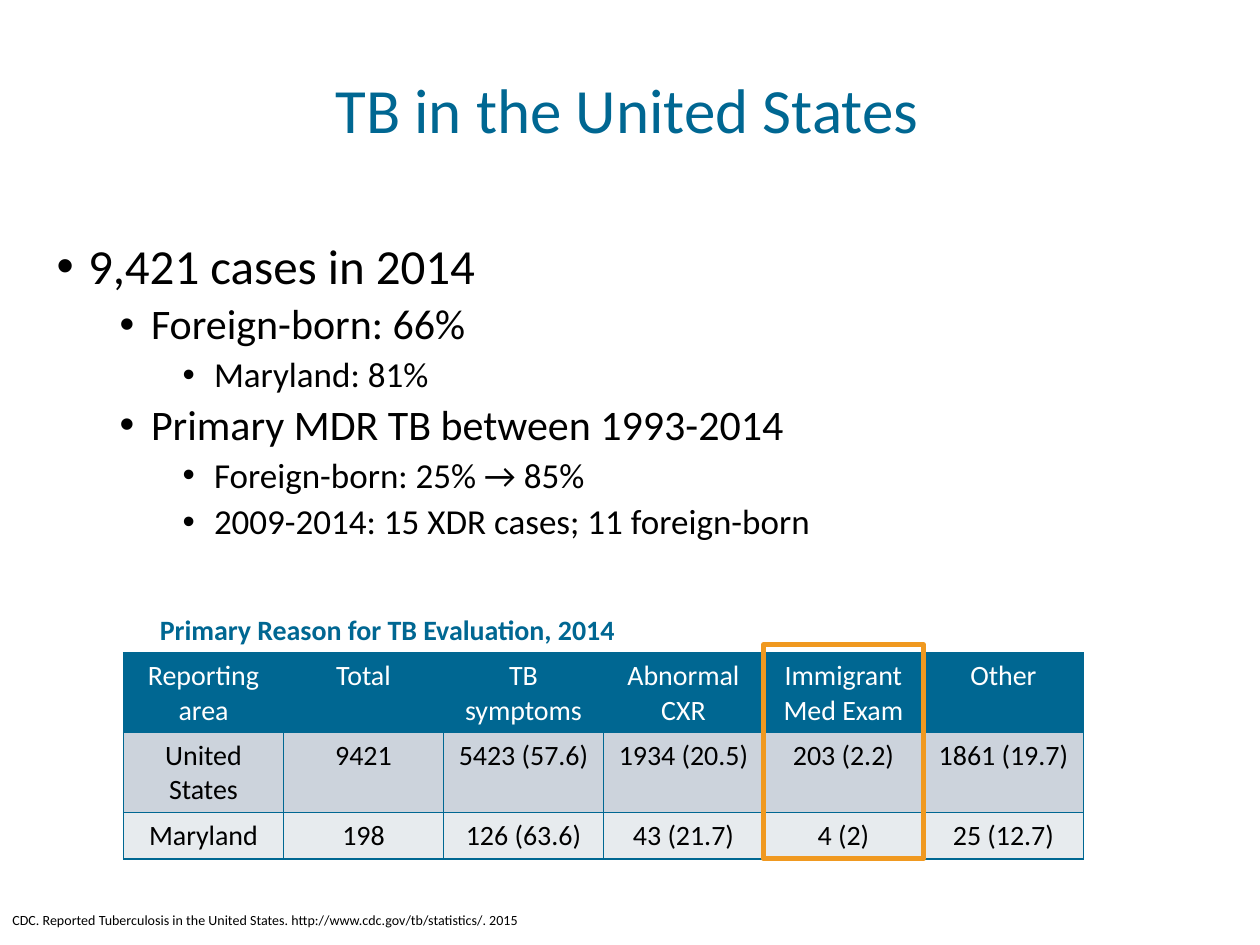
from lxml import etree
from pptx import Presentation
from pptx.dml.color import RGBColor
from pptx.enum.shapes import MSO_SHAPE
from pptx.enum.text import MSO_ANCHOR, PP_ALIGN
from pptx.oxml.ns import qn
from pptx.util import Cm, Pt

RECT = MSO_SHAPE.RECTANGLE
TOP, BOTTOM = MSO_ANCHOR.TOP, MSO_ANCHOR.BOTTOM
LEFT, CENTER = PP_ALIGN.LEFT, PP_ALIGN.CENTER

FONT = "Calibri"
BLUE, ORANGE, BLACK, WHITE = "006792", "F09920", "000000", "FFFFFF"
ROW_FILLS = [BLUE, "CCD3DC", "E7EBEE"]
ROW_HEIGHTS = [1.61, 1.61, 0.93]
BULLET_SIZES = [28, 24, 20]

BULLETS = [
    (0, "9,421 cases in 2014"),
    (1, "Foreign-born: 66%"),
    (2, "Maryland: 81%"),
    (1, "Primary MDR TB between 1993-2014"),
    (2, "Foreign-born: 25% → 85%"),
    (2, "2009-2014: 15 XDR cases; 11 foreign-born"),
]
REASONS = [
    ["Reporting area", "Total", "TB symptoms", "Abnormal CXR", "Immigrant Med Exam", "Other"],
    ["United States", "9421", "5423 (57.6)", "1934 (20.5)", "203 (2.2)", "1861 (19.7)"],
    ["Maryland", "198", "126 (63.6)", "43 (21.7)", "4 (2)", "25 (12.7)"],
]
HIGHLIGHT_COL = 4


def rgb(color):
    return RGBColor.from_string(color)


def add_run(p, text, size, color, bold=False):
    r = p.add_run()
    r.text = text
    r.font.name, r.font.size, r.font.bold = FONT, Pt(size), bold
    r.font.color.rgb = rgb(color)


def add_box(s, x, y, w, h, anchor=TOP):
    tf = s.shapes.add_textbox(Cm(x), Cm(y), Cm(w), Cm(h)).text_frame
    tf.word_wrap = True
    tf.vertical_anchor = anchor
    return tf


def add_line(s, box, text, size, color, bold=False, align=CENTER, anchor=BOTTOM):
    """One paragraph of text in a box."""
    p = add_box(s, *box, anchor).paragraphs[0]
    p.alignment = align
    add_run(p, text, size, color, bold)


def add_bullets(s, x, y, w, h):
    tf = add_box(s, x, y, w, h)
    for i, (level, text) in enumerate(BULLETS):
        p = tf.add_paragraph() if i else tf.paragraphs[0]
        p.level = level
        p.line_spacing = 0.9
        if i:
            p.space_before = Pt(5)
        pPr = p._p.get_or_add_pPr()
        pPr.set("marL", str(Cm(0.635 + 1.27 * level)))
        pPr.set("indent", str(-Cm(0.635)))
        etree.SubElement(pPr, qn("a:buFont"), typeface="Arial")
        etree.SubElement(pPr, qn("a:buChar"), char="•")
        add_run(p, text, BULLET_SIZES[level], BLACK)


def add_borders(cell, color):
    """Thin lines on all four sides, placed ahead of the cell fill."""
    tcPr = cell._tc.get_or_add_tcPr()
    for i, side in enumerate(["a:lnL", "a:lnR", "a:lnT", "a:lnB"]):
        ln = etree.Element(qn(side), w=str(Pt(1)))
        fill = etree.SubElement(ln, qn("a:solidFill"))
        etree.SubElement(fill, qn("a:srgbClr"), val=color)
        tcPr.insert(i, ln)


def add_reason_table(s, x, y, w):
    h = sum(ROW_HEIGHTS)
    n_cols = len(REASONS[0])
    col_w = w / n_cols
    table = s.shapes.add_table(len(REASONS), n_cols, Cm(x), Cm(y), Cm(w), Cm(h)).table
    for col in table.columns:
        col.width = Cm(col_w)
    for i, values in enumerate(REASONS):
        table.rows[i].height = Cm(ROW_HEIGHTS[i])
        for j, value in enumerate(values):
            cell = table.cell(i, j)
            cell.fill.solid()
            cell.fill.fore_color.rgb = rgb(ROW_FILLS[i])
            add_borders(cell, BLUE)
            p = cell.text_frame.paragraphs[0]
            p.alignment = CENTER
            add_run(p, value, 16, BLACK if i else WHITE)

    # Caption above the table
    add_line(s, (x - 2.34, y - 0.89, 15.32, 0.89),
             "Primary Reason for TB Evaluation, 2014", 16, BLUE, bold=True)

    # Frame around the highlighted column
    rise = 0.16
    frame = s.shapes.add_shape(RECT, Cm(x + HIGHLIGHT_COL * col_w), Cm(y - rise),
                               Cm(col_w), Cm(h + rise))
    frame.shadow.inherit = False
    frame.fill.background()
    frame.line.color.rgb = rgb(ORANGE)
    frame.line.width = Pt(3)


def main():
    prs = Presentation()
    prs.slide_width, prs.slide_height = Cm(25.4), Cm(19.05)
    s = prs.slides.add_slide(prs.slide_layouts[6])

    # Title
    add_line(s, (0.89, 1.12, 23.5, 1.96), "TB in the United States", 36, BLUE)
    # Key figures
    add_bullets(s, 0.89, 4.75, 23.5, 13.36)
    # Citation
    add_line(s, (0, 18.26, 13.34, 0.79),
             "CDC. Reported Tuberculosis in the United States. "
             "http://www.cdc.gov/tb/statistics/. 2015",
             8, BLACK, align=LEFT, anchor=TOP)
    # Table with caption and highlight
    add_reason_table(s, 2.49, 13.16, 19.35)

    prs.save("out.pptx")


if __name__ == "__main__":
    main()
